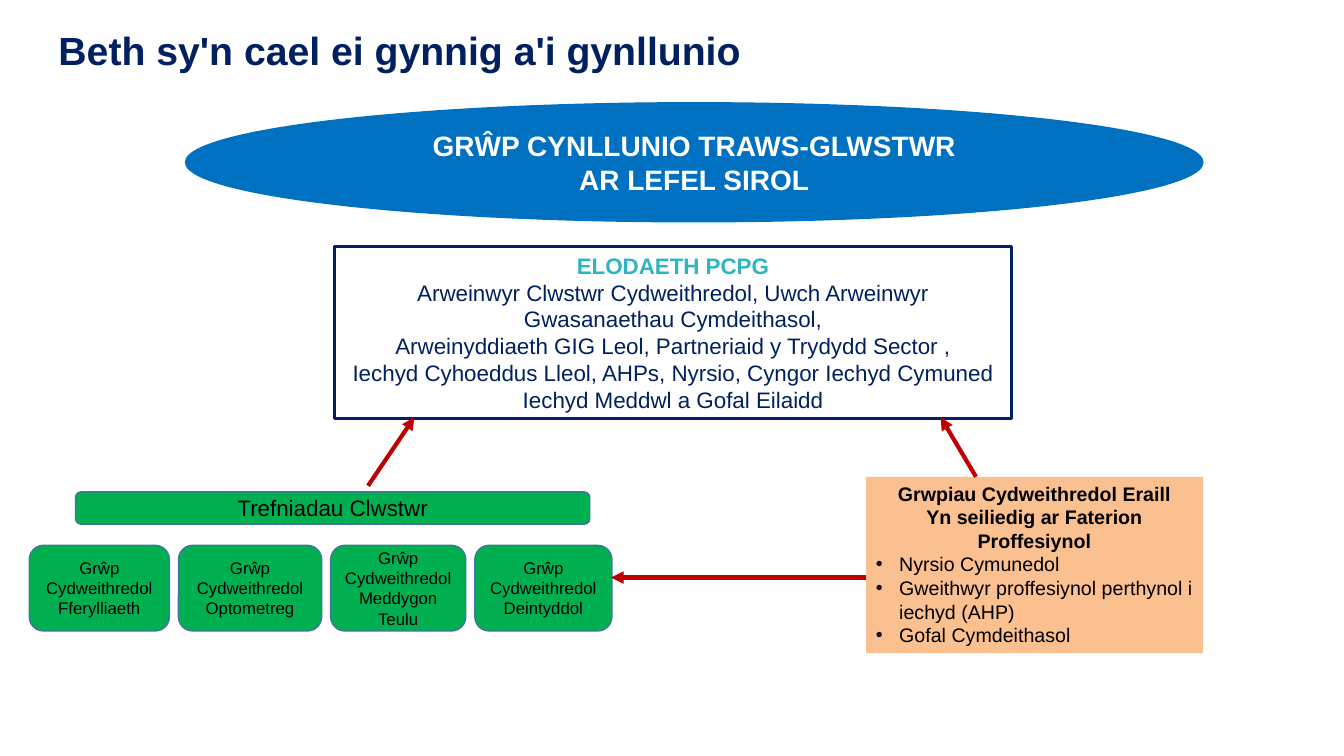
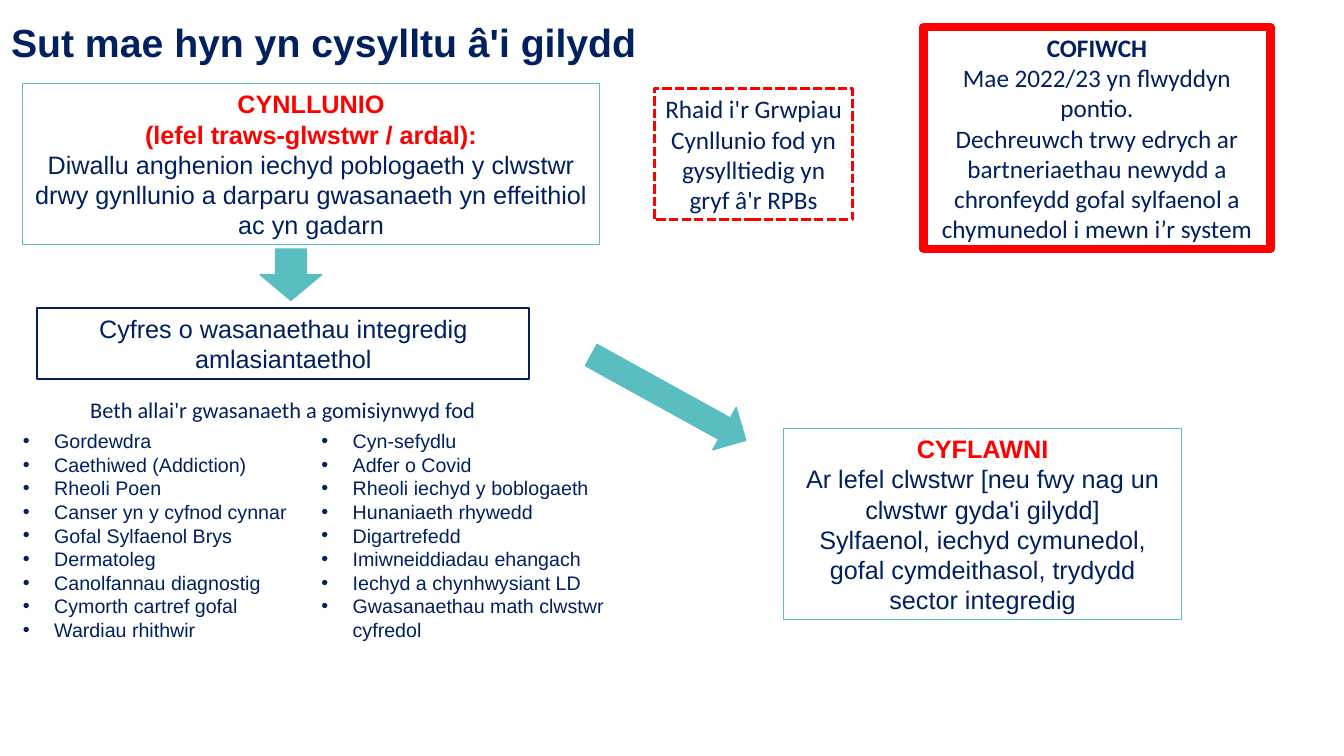
"""Builds two slides on cluster planning groups and how the parts connect."""
from lxml import etree
from pptx import Presentation
from pptx.dml.color import RGBColor
from pptx.enum.dml import MSO_LINE
from pptx.enum.shapes import MSO_CONNECTOR, MSO_SHAPE
from pptx.enum.text import MSO_ANCHOR, PP_ALIGN
from pptx.oxml.ns import qn
from pptx.util import Inches, Pt

RECT, ROUND = MSO_SHAPE.RECTANGLE, MSO_SHAPE.ROUNDED_RECTANGLE
OVAL, DOWN = MSO_SHAPE.OVAL, MSO_SHAPE.DOWN_ARROW
STRAIGHT = MSO_CONNECTOR.STRAIGHT
SYSTEM_DASH = MSO_LINE.SQUARE_DOT
LEFT, CENTER = PP_ALIGN.LEFT, PP_ALIGN.CENTER
TOP, MIDDLE = MSO_ANCHOR.TOP, MSO_ANCHOR.MIDDLE

NAVY, TEAL, AQUA = "002060", "5ABEC1", "2EB5BE"
BLUE, GREEN, SLATE = "0070C0", "00B050", "43739E"
RED, CRIMSON, PEACH = "FF0000", "C00000", "FAC090"
BLACK, WHITE = "000000", "FFFFFF"

TITLE = {"size": 28, "color": NAVY, "bold": True}
BANNER = {"size": 20, "color": WHITE, "bold": True}
MEMBERS = {"size": 16, "color": NAVY}
MEMBERS_HEAD = {"size": 16, "color": AQUA, "bold": True}
BAR = {"size": 16, "color": BLACK}
CARD = {"size": 12, "color": BLACK}
OTHERS_HEAD = {"size": 14, "color": BLACK, "bold": True}
OTHERS_ITEM = {"size": 14, "color": BLACK, "indent": 0.23}
STAGE_HEAD = {"size": 18, "color": RED, "bold": True}
STAGE = {"size": 18, "color": NAVY}
NOTE = {"size": 18, "color": NAVY, "name": "Calibri"}
NOTE_HEAD = {**NOTE, "bold": True}
CAPTION = {**NOTE, "size": 16}
SERVICE = {"size": 14, "color": NAVY, "indent": 0.31}

GREEN_BOX = {"fill": GREEN, "line": SLATE, "anchor": MIDDLE}
TEAL_ARROW = {"fill": TEAL, "line": TEAL}

BANNER_TEXT = [("GRŴP CYNLLUNIO TRAWS-GLWSTWR", BANNER), ("AR LEFEL SIROL", BANNER)]
MEMBERS_TEXT = [
    ("ELODAETH PCPG", MEMBERS_HEAD),
    ("Arweinwyr Clwstwr Cydweithredol, Uwch Arweinwyr Gwasanaethau Cymdeithasol,", MEMBERS),
    ("Arweinyddiaeth GIG Leol, Partneriaid y Trydydd Sector ,", MEMBERS),
    ("Iechyd Cyhoeddus Lleol, AHPs, Nyrsio, Cyngor Iechyd Cymuned", MEMBERS),
    ("Iechyd Meddwl a Gofal Eilaidd", MEMBERS),
]
OTHERS_TEXT = [
    ("Grwpiau Cydweithredol Eraill", OTHERS_HEAD),
    ("Yn seiliedig ar Faterion Proffesiynol", OTHERS_HEAD),
    ("Nyrsio Cymunedol", OTHERS_ITEM),
    ("Gweithwyr proffesiynol perthynol i iechyd (AHP)", OTHERS_ITEM),
    ("Gofal Cymdeithasol", OTHERS_ITEM),
]
GROUPS = [("Fferylliaeth", 1.39), ("Optometreg", 1.42), ("Meddygon Teulu", 1.34), ("Deintyddol", 1.36)]
ARROWS = [
    ((3.65, 4.82), (4.11, 4.14)),
    ((9.68, 4.73), (9.33, 4.14)),
    ((8.59, 5.73), (6.06, 5.73)),
]
PLAN_TEXT = [
    ("CYNLLUNIO", STAGE_HEAD),
    ("(lefel traws-glwstwr / ardal):", STAGE_HEAD),
    ("Diwallu anghenion iechyd poblogaeth y clwstwr drwy gynllunio a darparu "
     "gwasanaeth yn effeithiol ac yn gadarn", STAGE),
]
DELIVER_TEXT = [
    ("CYFLAWNI", STAGE_HEAD),
    ("Ar lefel clwstwr [neu fwy nag un clwstwr gyda'i gilydd]", STAGE),
    ("Sylfaenol, iechyd cymunedol, gofal cymdeithasol, trydydd sector integredig", STAGE),
]
SUITE_TEXT = [("Cyfres o wasanaethau integredig amlasiantaethol", STAGE)]
LINK_TEXT = [
    ("Rhaid i'r Grwpiau Cynllunio fod yn", NOTE),
    ("gysylltiedig yn gryf â'r RPBs", NOTE),
]
REMEMBER_TEXT = [
    ("COFIWCH", NOTE_HEAD),
    ("Mae 2022/23 yn flwyddyn pontio.", NOTE),
    ("Dechreuwch trwy edrych ar bartneriaethau newydd a chronfeydd gofal "
     "sylfaenol a chymunedol i mewn i’r system", NOTE),
]
CAPTION_TEXT = [("Beth allai'r gwasanaeth a gomisiynwyd fod", CAPTION)]
SERVICES = [
    ["Gordewdra", "Caethiwed (Addiction)", "Rheoli Poen", "Canser yn y cyfnod cynnar",
     "Gofal Sylfaenol Brys", "Dermatoleg", "Canolfannau diagnostig",
     "Cymorth cartref gofal", "Wardiau rhithwir"],
    ["Cyn-sefydlu", "Adfer o Covid", "Rheoli iechyd y boblogaeth", "Hunaniaeth rhywedd",
     "Digartrefedd", "Imiwneiddiadau ehangach", "Iechyd a chynhwysiant LD",
     "Gwasanaethau math clwstwr cyfredol"],
]


def rgb(value):
    """Turns a hex string into a colour."""
    return RGBColor.from_string(value)


def add_bullet(para, indent):
    """Gives a paragraph a hanging bullet."""
    properties = para._p.get_or_add_pPr()
    properties.set("marL", str(Inches(indent)))
    properties.set("indent", str(-Inches(indent)))
    etree.SubElement(properties, qn("a:buFont")).set("typeface", "Arial")
    etree.SubElement(properties, qn("a:buChar")).set("char", "•")


def add_span(para, text, style):
    """Adds one formatted run to a paragraph."""
    span = para.add_run()
    span.text = text
    formats = {
        "name": style.get("name", "Arial"),
        "size": Pt(style["size"]),
        "bold": style.get("bold", False),
    }
    for key, value in formats.items():
        setattr(span.font, key, value)
    span.font.color.rgb = rgb(style["color"])


def write(frame, paragraphs, anchor=TOP):
    """Fills a text frame with (text, style) paragraphs."""
    frame.word_wrap = True
    frame.vertical_anchor = anchor
    for index, (text, style) in enumerate(paragraphs):
        para = frame.add_paragraph() if index else frame.paragraphs[0]
        para.alignment = LEFT if "indent" in style else CENTER
        if "indent" in style:
            add_bullet(para, style["indent"])
        add_span(para, text, style)


def add_box(page, kind, place, paragraphs=(), fill=None, line=None, width=1,
            dash=None, anchor=TOP, rotation=0):
    """Adds a preset shape with its fill, outline and text."""
    box = page.shapes.add_shape(kind, *map(Inches, place))
    box.shadow.inherit = False
    box.rotation = rotation
    if fill:
        box.fill.solid()
        box.fill.fore_color.rgb = rgb(fill)
    else:
        box.fill.background()
    if line:
        box.line.color.rgb = rgb(line)
        box.line.width = Pt(width)
        box.line.dash_style = dash
    else:
        box.line.fill.background()
    write(box.text_frame, paragraphs, anchor)


def add_label(page, place, paragraphs):
    """Adds a plain text box."""
    box = page.shapes.add_textbox(*map(Inches, place))
    write(box.text_frame, paragraphs)


def add_arrow(page, start, end):
    """Adds a straight line with a head at its end."""
    arrow = page.shapes.add_connector(STRAIGHT, *map(Inches, start + end))
    arrow.line.color.rgb = rgb(CRIMSON)
    arrow.line.width = Pt(3)
    etree.SubElement(arrow.line._get_or_add_ln(), qn("a:tailEnd")).set("type", "triangle")
    etree.SubElement(arrow._element.spPr, qn("a:effectLst"))


def add_page(deck, heading, place):
    """Adds a title-only slide with its heading."""
    page = deck.slides.add_slide(deck.slide_layouts[5])
    title = page.shapes.title
    for key, value in zip(("left", "top", "width", "height"), place):
        setattr(title, key, Inches(value))
    write(title.text_frame, [(heading, TITLE)], MIDDLE)
    para = title.text_frame.paragraphs[0]
    para.alignment = LEFT
    para.line_spacing = 0.9
    return page


def build_proposal(deck):
    """Builds the slide on what is proposed."""
    page = add_page(deck, "Beth sy'n cael ei gynnig a'i gynllunio", (0.48, 0.17, 11.5, 0.7))
    add_box(page, OVAL, (1.84, 1.02, 10.09, 1.18), BANNER_TEXT, fill=BLUE, line=BLUE, anchor=MIDDLE)
    add_box(page, RECT, (3.32, 2.45, 6.71, 1.7), MEMBERS_TEXT, line=NAVY, width=2.25)
    add_box(page, ROUND, (0.75, 4.88, 5.1, 0.32), [("Trefniadau Clwstwr", BAR)], **GREEN_BOX)
    left, gap = 0.29, 0.09
    for group, width in GROUPS:
        add_box(page, ROUND, (left, 5.41, width, 0.85),
                [(f"Grŵp Cydweithredol {group}", CARD)], **GREEN_BOX)
        left += width + gap
    add_box(page, RECT, (8.59, 4.73, 3.34, 1.75), OTHERS_TEXT, fill=PEACH)
    for start, end in ARROWS:
        add_arrow(page, start, end)


def build_connections(deck):
    """Builds the slide on how the parts connect."""
    page = add_page(deck, "Sut mae hyn yn cysylltu â'i gilydd", (0.01, 0, 11.5, 0.88))
    add_box(page, RECT, (0.22, 0.83, 5.73, 1.6), PLAN_TEXT, line=TEAL, width=0.75)
    add_box(page, RECT, (7.77, 4.25, 3.95, 1.9), DELIVER_TEXT, line=TEAL, width=0.75)
    add_box(page, RECT, (0.37, 3.06, 4.88, 0.7), SUITE_TEXT, line=NAVY, width=1.5)
    add_box(page, DOWN, (2.58, 2.47, 0.61, 0.51), **TEAL_ARROW)
    add_box(page, DOWN, (6.39, 3.07, 0.48, 1.75), rotation=298.9, **TEAL_ARROW)
    add_box(page, RECT, (6.49, 0.88, 1.97, 1.3), LINK_TEXT, line=RED, width=2.25, dash=SYSTEM_DASH)
    add_box(page, RECT, (9.16, 0.27, 3.44, 2.2), REMEMBER_TEXT, line=RED, width=6)
    add_label(page, (0.36, 3.88, 4.89, 0.37), CAPTION_TEXT)
    left, pitch = 0.13, 2.96
    for index, services in enumerate(SERVICES):
        add_label(page, (left + index * pitch, 4.21, 3.06, 2.43),
                  [(service, SERVICE) for service in services])


def main():
    """Builds and saves the deck."""
    deck = Presentation()
    deck.slide_width, deck.slide_height = Inches(13.33), Inches(7.5)
    build_proposal(deck)
    build_connections(deck)
    deck.save("out.pptx")


if __name__ == "__main__":
    main()
